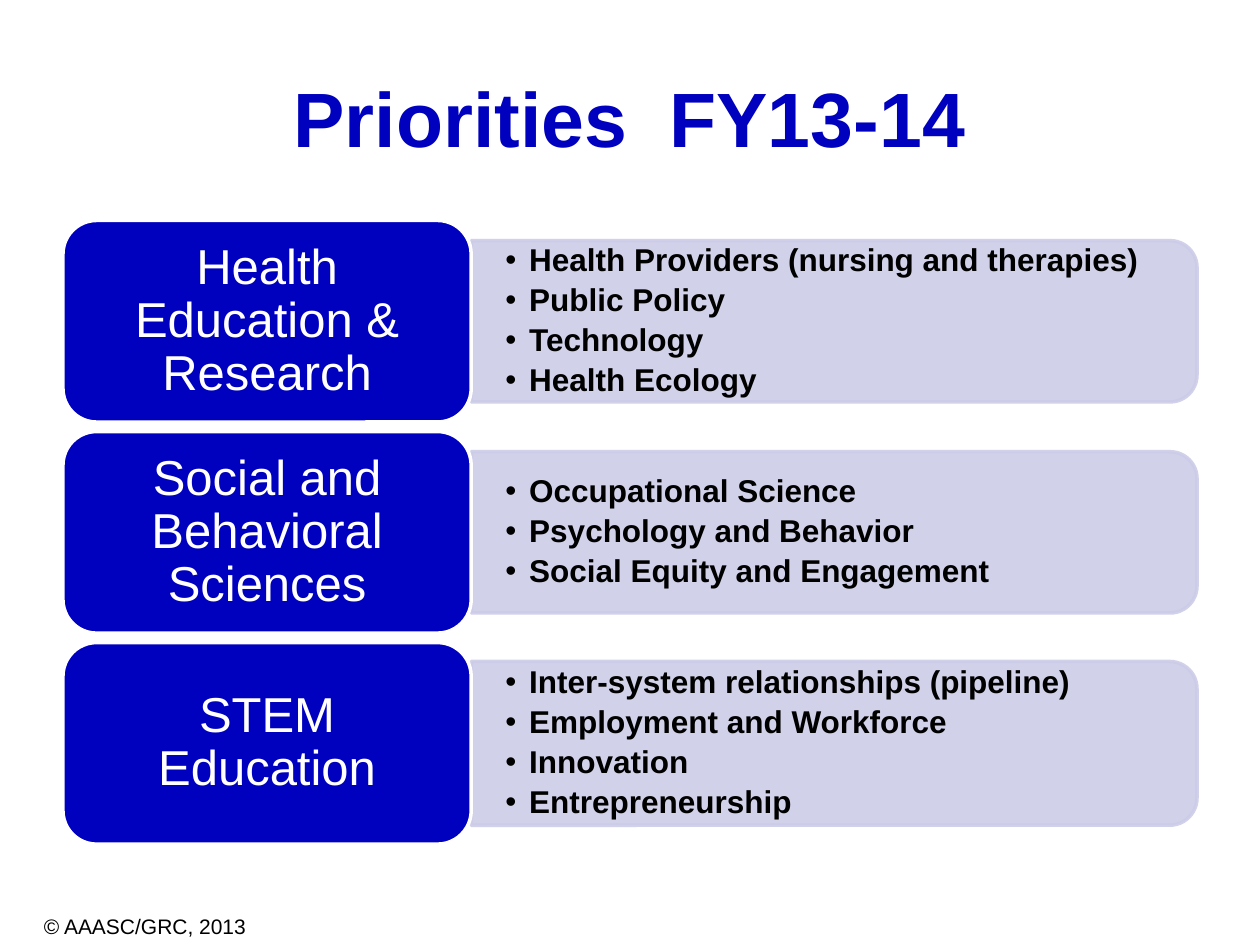
from dataclasses import dataclass

from lxml import etree
from pptx import Presentation
from pptx.dml.color import RGBColor
from pptx.enum.shapes import MSO_SHAPE
from pptx.enum.text import MSO_ANCHOR, MSO_AUTO_SIZE, PP_ALIGN
from pptx.oxml.ns import qn
from pptx.util import Inches, Pt

BLUE = RGBColor(0x00, 0x00, 0xBF)
LAVENDER = RGBColor(0xCC, 0xCC, 0xE8)
WHITE = RGBColor(0xFF, 0xFF, 0xFF)
BLACK = RGBColor(0x00, 0x00, 0x00)

ROUNDED = MSO_SHAPE.ROUNDED_RECTANGLE
ROUNDED_ON_ONE_SIDE = MSO_SHAPE.ROUND_2_SAME_RECTANGLE
MIDDLE = MSO_ANCHOR.MIDDLE
LEFT, CENTER = PP_ALIGN.LEFT, PP_ALIGN.CENTER
NO_AUTOFIT = MSO_AUTO_SIZE.NONE
COMPARISON_LAYOUT = 4

# Row geometry in inches
ROW_LEFT, ROW_TOP, ROW_PITCH = 0.5, 1.75, 1.675
LABEL_WIDTH, LABEL_HEIGHT = 3.24, 1.6
PANEL_LEFT, PANEL_WIDTH = ROW_LEFT + LABEL_WIDTH, 5.76
LIST_WIDTH, LIST_INSET = 5.7, 0.13
BULLET_INDENT = 0.19


@dataclass
class Priority:
    label: str
    topics: list[str]
    panel_height: float = 1.28


PRIORITIES = [
    Priority("Health Education & Research",
             ["Health Providers (nursing and therapies)", "Public Policy",
              "Technology", "Health Ecology"]),
    Priority("Social and Behavioral Sciences",
             ["Occupational Science", "Psychology and Behavior",
              "Social Equity and Engagement"]),
    Priority("STEM Education",
             ["Inter-system relationships (pipeline)",
              "Employment and Workforce", "Innovation", "Entrepreneurship"],
             panel_height=1.3),
]


def place(shape, left: float, top: float, width: float, height: float) -> None:
    shape.left, shape.top = Inches(left), Inches(top)
    shape.width, shape.height = Inches(width), Inches(height)


def set_margins(text_frame, horizontal: float, vertical: float) -> None:
    text_frame.margin_left = text_frame.margin_right = Inches(horizontal)
    text_frame.margin_top = text_frame.margin_bottom = Inches(vertical)


def format_text(text_frame, size: int, color: RGBColor, bold: bool,
                alignment, line_spacing: float = 1.0,
                space_after: float = 0) -> None:
    for paragraph in text_frame.paragraphs:
        paragraph.alignment = alignment
        paragraph.line_spacing = line_spacing
        paragraph.space_before = Pt(0)
        paragraph.space_after = Pt(space_after)
        for run in paragraph.runs:
            run.font.name = "Arial"
            run.font.size = Pt(size)
            run.font.bold = bold
            run.font.color.rgb = color


def add_box(slide, kind, fill: RGBColor, line: RGBColor,
            left: float, top: float, width: float, height: float):
    shape = slide.shapes.add_shape(kind, Inches(left), Inches(top),
                                   Inches(width), Inches(height))
    shape.shadow.inherit = False
    shape.fill.solid()
    shape.fill.fore_color.rgb = fill
    shape.line.color.rgb = line
    shape.line.width = Pt(2)
    return shape


def add_panel(slide, middle: float, height: float) -> None:
    """Draw an upright shape and turn it so its round corners face right."""
    center = PANEL_LEFT + PANEL_WIDTH / 2
    panel = add_box(slide, ROUNDED_ON_ONE_SIDE, LAVENDER, LAVENDER,
                    center - height / 2, middle - PANEL_WIDTH / 2,
                    height, PANEL_WIDTH)
    panel.rotation = 90
    for color in panel._element.spPr.iter(qn("a:srgbClr")):
        etree.SubElement(color, qn("a:alpha"), val="90000")


def add_label(slide, text: str, top: float) -> None:
    label = add_box(slide, ROUNDED, BLUE, WHITE,
                    ROW_LEFT, top, LABEL_WIDTH, LABEL_HEIGHT)
    text_frame = label.text_frame
    text_frame.word_wrap = True
    text_frame.vertical_anchor = MIDDLE
    set_margins(text_frame, 0.12, 0.06)
    text_frame.text = text
    format_text(text_frame, 28, WHITE, False, CENTER, 0.9)


def fill_list(slide, placeholder, topics: list[str], middle: float,
              panel_height: float) -> None:
    height = panel_height - LIST_INSET
    place(placeholder, PANEL_LEFT, middle - height / 2, LIST_WIDTH, height)
    text_frame = placeholder.text_frame
    text_frame.auto_size = NO_AUTOFIT
    text_frame.vertical_anchor = MIDDLE
    set_margins(text_frame, 0.27, 0.14)
    text_frame.text = "\n".join(topics)
    for paragraph in text_frame.paragraphs:
        properties = paragraph._p.get_or_add_pPr()
        properties.set("marL", str(Inches(BULLET_INDENT)))
        properties.set("indent", str(-Inches(BULLET_INDENT)))
        etree.SubElement(properties, qn("a:buFont"), typeface="Arial")
        etree.SubElement(properties, qn("a:buChar"), char="•")
    format_text(text_frame, 18, BLACK, True, LEFT, 0.9, 3.4)
    # Bring the list in front of its panel
    slide.shapes._spTree.append(placeholder._element)


def main() -> None:
    presentation = Presentation()
    presentation.slide_width = Inches(10)
    presentation.slide_height = Inches(7.5)
    layout = presentation.slide_layouts[COMPARISON_LAYOUT]
    slide = presentation.slides.add_slide(layout)

    # Title
    title = slide.shapes.title
    place(title, 0.5, 0.3, 9, 1.25)
    title.text_frame.text = "Priorities  FY13-14"
    title.text_frame.vertical_anchor = MIDDLE
    format_text(title.text_frame, 44, BLUE, True, CENTER)

    # One row per priority: panel, list, label
    *lists, spare = list(slide.placeholders)[1:]
    spare._element.getparent().remove(spare._element)
    for index, (priority, placeholder) in enumerate(zip(PRIORITIES, lists)):
        top = ROW_TOP + index * ROW_PITCH
        middle = top + LABEL_HEIGHT / 2
        add_panel(slide, middle, priority.panel_height)
        fill_list(slide, placeholder, priority.topics, middle,
                  priority.panel_height)
        add_label(slide, priority.label, top)

    # Copyright line
    notice = slide.shapes.add_textbox(Inches(0.25), Inches(7.2),
                                      Inches(1.82), Inches(0.3))
    notice.text_frame.word_wrap = False
    notice.text_frame.text = "© AAASC/GRC, 2013"
    format_text(notice.text_frame, 12, BLACK, False, LEFT)

    presentation.save("out.pptx")


if __name__ == "__main__":
    main()
